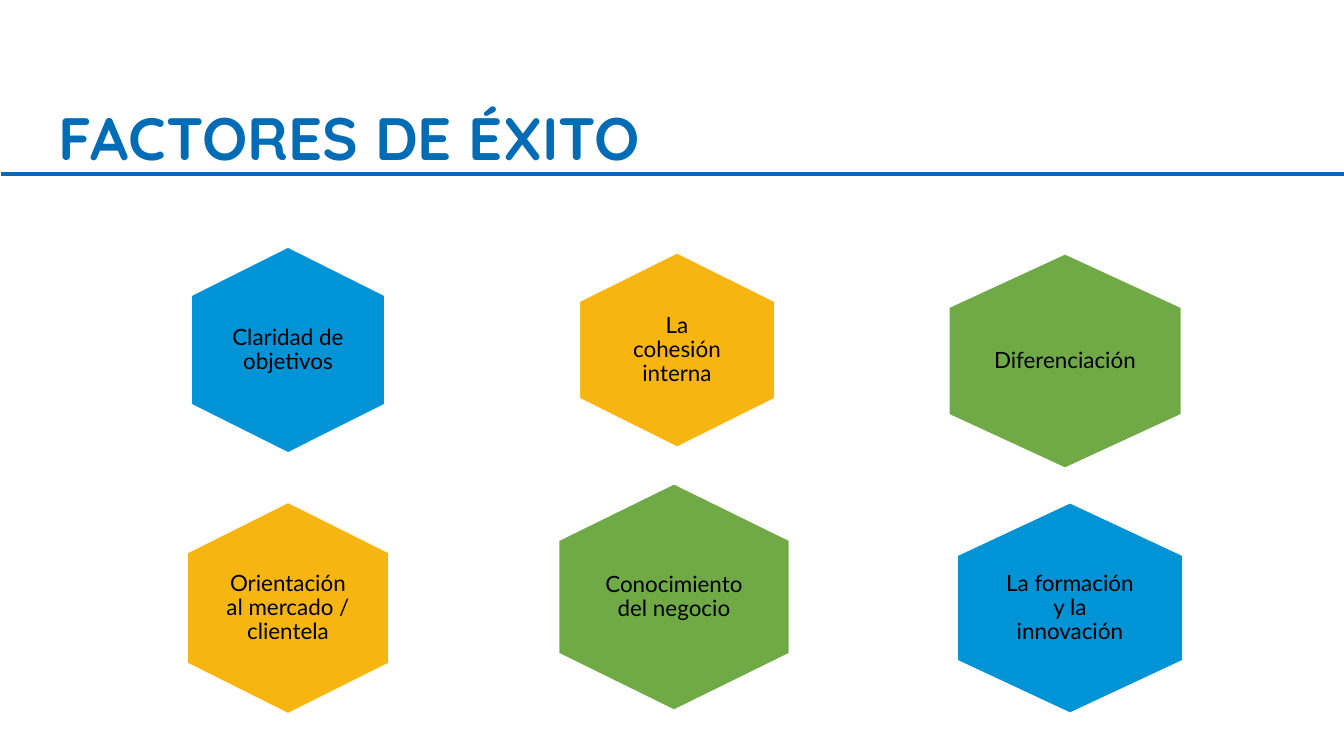
"""Build the slide of six success factors shown as coloured hexagons."""
from dataclasses import dataclass

from lxml.etree import SubElement
from pptx import Presentation
from pptx.dml.color import RGBColor
from pptx.enum.shapes import MSO_CONNECTOR, MSO_SHAPE
from pptx.enum.text import MSO_ANCHOR, PP_ALIGN
from pptx.oxml.ns import qn
from pptx.slide import Slide
from pptx.text.text import TextFrame
from pptx.util import Emu, Pt

EMU_PER_PX = 914400 / 134.4
COLORS = {
    "title": "006CB5",
    "blue": "0093D6",
    "yellow": "F7B512",
    "green": "6FAA47",
    "white": "FFFFFF",
    "black": "000000",
}


@dataclass(frozen=True)
class Factor:
    text: str
    color: str
    center: tuple[int, int]
    hexagon_size: tuple[int, int]
    label_size: tuple[int, int]
    inset: int = 0
    outline: str = "white"


FACTORS = [
    Factor("La cohesión interna", "yellow", (677, 350), (195, 196), (130, 130), 7),
    Factor("Claridad de objetivos", "blue", (288, 350), (202, 190), (129, 137), outline="blue"),
    Factor("Conocimiento del negocio", "green", (674, 597), (227, 231), (155, 151), 7),
    Factor("Diferenciación", "green", (1065, 361), (215, 233), (155, 142)),
    Factor("La formación y la innovación", "blue", (1070, 608), (211, 226), (151, 140), 7),
    Factor("Orientación al mercado / clientela", "yellow", (288, 608), (212, 202), (136, 144)),
]


def px(length: float) -> Emu:
    """Turn pixels into EMU."""
    return Emu(round(length * EMU_PER_PX))


def rgb(name: str) -> RGBColor:
    """Look up a colour by name."""
    return RGBColor.from_string(COLORS[name])


def centered_frame(center: tuple[int, int], size: tuple[int, int]) -> list[Emu]:
    """Return left, top, width and height of a frame around a centre."""
    corner = [middle - length / 2 for middle, length in zip(center, size)]
    return [px(length) for length in (*corner, *size)]


def format_text(frame: TextFrame, text: str, font: str, size: int, color: str,
                align: PP_ALIGN, insets: tuple[int, int], bold: bool = False) -> None:
    """Write one paragraph and format it."""
    frame.text = text
    frame.word_wrap = True
    frame.vertical_anchor = MSO_ANCHOR.MIDDLE
    frame.margin_left = frame.margin_right = px(insets[0])
    frame.margin_top = frame.margin_bottom = px(insets[1])
    para = frame.paragraphs[0]
    para.alignment = align
    para.line_spacing = 0.9
    span = para.runs[0]
    span.font.name = font
    span.font.size = Pt(size)
    span.font.bold = bold
    span.font.color.rgb = rgb(color)


def add_factor(slide: Slide, factor: Factor) -> None:
    """Draw an upright hexagon with its label."""
    hexagon = slide.shapes.add_shape(
        MSO_SHAPE.HEXAGON, *centered_frame(factor.center, factor.hexagon_size))
    hexagon.rotation = 90
    hexagon.adjustments[0] = 0.25
    hexagon.shadow.inherit = False
    hexagon.fill.solid()
    hexagon.fill.fore_color.rgb = rgb(factor.color)
    hexagon.line.color.rgb = rgb(factor.outline)
    hexagon.line.width = Pt(1)
    label = slide.shapes.add_textbox(*centered_frame(factor.center, factor.label_size))
    format_text(label.text_frame, factor.text, "Lato", 12, "black",
                PP_ALIGN.CENTER, (factor.inset, factor.inset))


def add_title(slide: Slide, text: str) -> None:
    """Place the title and the rule beneath it."""
    title = slide.shapes.title
    title.left, title.top, title.width, title.height = map(px, (46, 69, 1266, 145))
    format_text(title.text_frame, text, "Quicksand", 32, "title",
                PP_ALIGN.LEFT, (13, 7), bold=True)
    rule = slide.shapes.add_connector(
        MSO_CONNECTOR.STRAIGHT, px(1), px(174), px(1345), px(174))
    rule.line.color.rgb = rgb("title")
    rule.line.width = Pt(2)
    SubElement(rule._element.spPr, qn("a:effectLst"))


def main() -> None:
    """Build and save the deck."""
    deck = Presentation()
    deck.slide_width, deck.slide_height = px(1344), px(756)
    page = deck.slides.add_slide(deck.slide_layouts[5])
    for factor in FACTORS:
        add_factor(page, factor)
    add_title(page, "FACTORES DE ÉXITO")
    deck.save("out.pptx")


if __name__ == "__main__":
    main()
